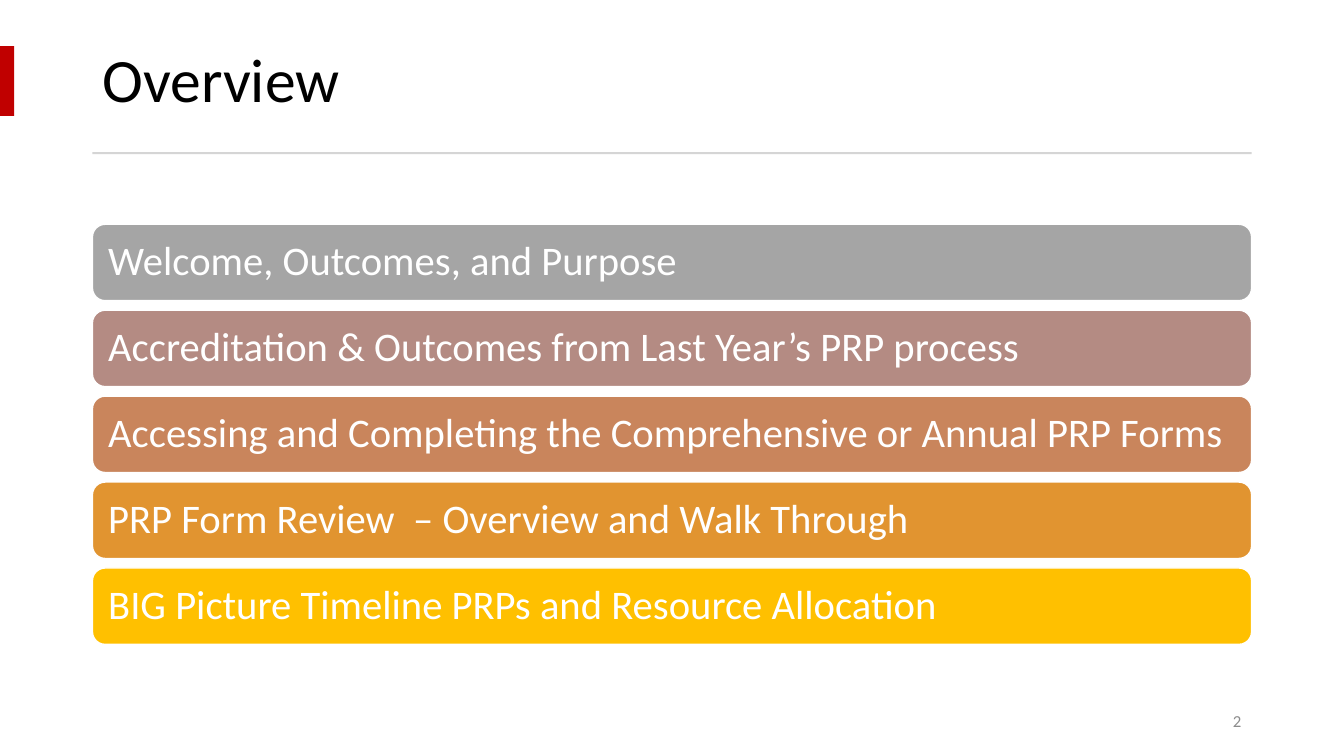
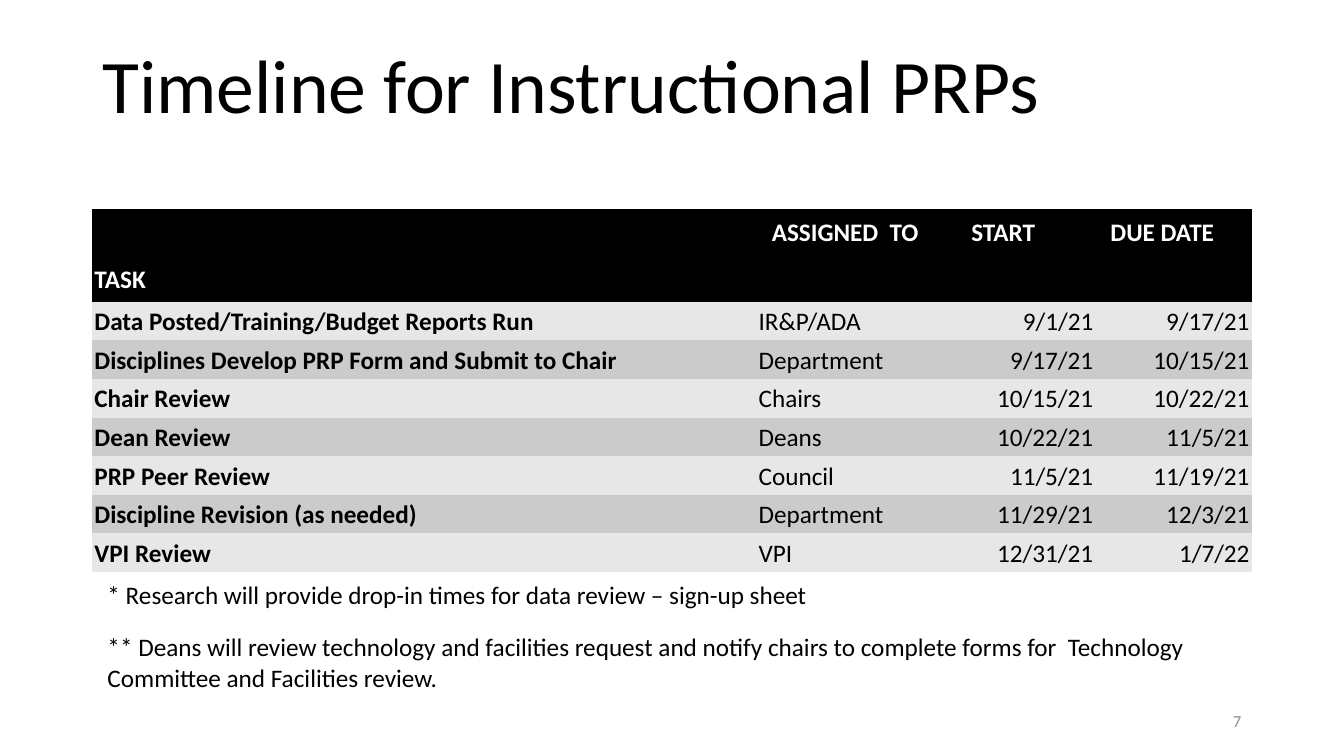
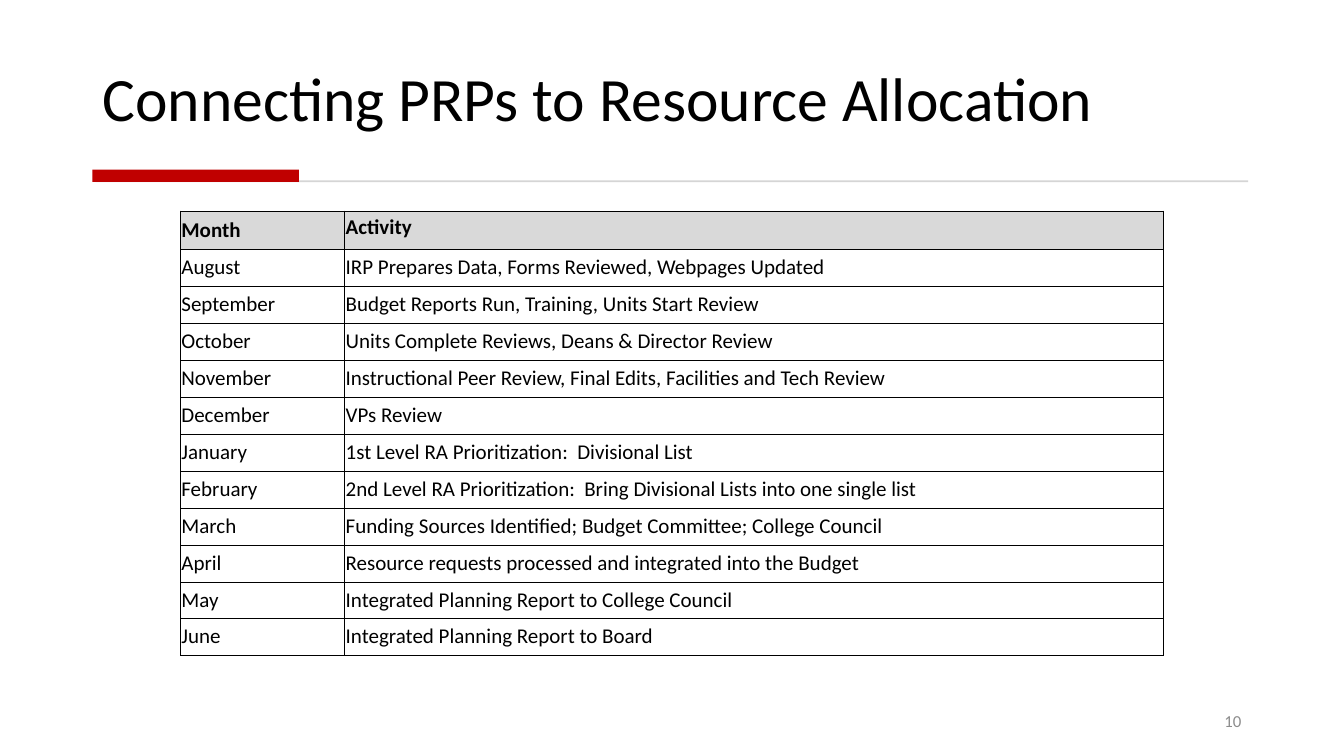
from dataclasses import dataclass

from lxml.etree import SubElement
from pptx import Presentation
from pptx.dml.color import RGBColor
from pptx.enum.shapes import MSO_SHAPE
from pptx.enum.text import MSO_ANCHOR, PP_ALIGN
from pptx.oxml.ns import qn
from pptx.util import Inches, Pt


@dataclass(frozen=True)
class Theme:
    font: str = "Calibri"
    ink: str = "000000"
    paper: str = "FFFFFF"
    accent: str = "C00000"
    rule: str = "D5D5D5"
    muted: str = "8C8C8C"
    header: str = "D9D9D9"
    bands: tuple = ("E7E7E7", "CBCBCB")
    agenda: tuple = ("A5A5A5", "B48B83", "C9855C", "E19430", "FFC000")
    title_size: int = 44
    large_title_size: int = 54
    agenda_size: int = 29
    timeline_size: int = 18
    month_size: int = 15
    footer_size: int = 12
    text_inset: tuple = (1.2, 0.6, 1.2, 0.6)
    agenda_inset: tuple = (1.44, 1.44, 1.44, 1.44)
    roomy_inset: tuple = (1.8, 0.96, 1.8, 0.96)
    tight_inset: tuple = (0.24, 0.24, 0.24, 0)
    month_inset: tuple = (0.12, 0.12, 0.12, 0.72)
    plain_table: str = "{2D5ABB26-0587-4C30-8999-92F81FD0307C}"


GRID_COLUMNS, GRID_ROWS = 160, 90
MARGIN, CONTENT = 11, 138


class Deck:
    def __init__(self, theme):
        self.theme = theme
        self.show = Presentation()
        self.show.slide_width, self.show.slide_height = Inches(13.33), Inches(7.5)
        self.slide = None

    def x(self, columns):
        return round(self.show.slide_width * columns / GRID_COLUMNS)

    def y(self, rows):
        return round(self.show.slide_height * rows / GRID_ROWS)

    def place(self, left, top, width, height):
        return self.x(left), self.y(top), self.x(width), self.y(height)

    def new_slide(self, number):
        self.slide = self.show.slides.add_slide(self.show.slide_layouts[6])
        self.text((113, 83.4, 36, 4.8), str(number), self.theme.footer_size,
                  self.theme.muted, align=PP_ALIGN.RIGHT)

    def margins(self, holder, inset):
        left, top, right, bottom = inset
        holder.margin_left, holder.margin_right = self.x(left), self.x(right)
        holder.margin_top, holder.margin_bottom = self.y(top), self.y(bottom)

    def set_words(self, frame, words, size, color, bold=False,
                  align=PP_ALIGN.LEFT, spacing=None):
        frame.word_wrap = True
        paragraph = frame.paragraphs[0]
        paragraph.text = words
        paragraph.alignment = align
        paragraph.line_spacing = spacing
        font = paragraph.font
        font.name, font.size, font.bold = self.theme.font, Pt(size), bold
        font.color.rgb = RGBColor.from_string(color)

    def text(self, area, words, size, color, anchor=MSO_ANCHOR.MIDDLE, **style):
        frame = self.slide.shapes.add_textbox(*self.place(*area)).text_frame
        self.margins(frame, self.theme.text_inset)
        frame.vertical_anchor = anchor
        self.set_words(frame, words, size, color, **style)

    def title(self, words, top, height, size=None, anchor=MSO_ANCHOR.BOTTOM):
        self.text((MARGIN, top, CONTENT, height), words,
                  size or self.theme.title_size, self.theme.ink, anchor, spacing=0.9)

    def block(self, area, fill, preset=MSO_SHAPE.RECTANGLE):
        block = self.slide.shapes.add_shape(preset, *self.place(*area))
        block.shadow.inherit = False
        block.fill.solid()
        block.fill.fore_color.rgb = RGBColor.from_string(fill)
        block.line.fill.background()
        return block

    def agenda_bar(self, area, words, fill):
        bar = self.block(area, fill, MSO_SHAPE.ROUNDED_RECTANGLE)
        bar.line.color.rgb = RGBColor.from_string(self.theme.paper)
        bar.line.width = Pt(1)
        frame = bar.text_frame
        self.margins(frame, self.theme.agenda_inset)
        frame.vertical_anchor = MSO_ANCHOR.MIDDLE
        self.set_words(frame, words, self.theme.agenda_size, self.theme.paper, spacing=0.9)

    def table(self, left, top, columns, rows, ruled=False):
        area = self.place(left, top, sum(columns), sum(rows))
        holder = self.slide.shapes.add_table(len(rows), len(columns), *area)
        table = holder.table
        table.first_row = table.horz_banding = False
        for style in holder.element.iter(qn("a:tableStyleId")):
            style.text = self.theme.plain_table
        for column, width in zip(table.columns, columns):
            column.width = self.x(width)
        for row, height in zip(table.rows, rows):
            row.height = self.y(height)
        if ruled:
            for cell in holder.element.iter(qn("a:tc")):
                self.border(cell.get_or_add_tcPr())
        return table

    def border(self, properties):
        for side in ("a:lnL", "a:lnR", "a:lnT", "a:lnB"):
            edge = SubElement(properties, qn(side), w=str(Pt(0.5)))
            paint = SubElement(edge, qn("a:solidFill"))
            SubElement(paint, qn("a:srgbClr"), val=self.theme.ink)

    def cell(self, cell, words, size, inset, fill=None, color=None,
             anchor=MSO_ANCHOR.MIDDLE, **style):
        self.margins(cell, inset)
        cell.vertical_anchor = anchor
        self.set_words(cell.text_frame, words, size, color or self.theme.ink, **style)
        if fill:
            cell.fill.solid()
            cell.fill.fore_color.rgb = RGBColor.from_string(fill)
        else:
            cell.fill.background()


AGENDA = (
    "Welcome, Outcomes, and Purpose",
    "Accreditation & Outcomes from Last Year’s PRP process",
    "Accessing and Completing the Comprehensive or Annual PRP Forms",
    "PRP Form Review  – Overview and Walk Through",
    "BIG Picture Timeline PRPs and Resource Allocation",
)
TIMELINE_HEADINGS = ("ASSIGNED  TO", "START", "DUE DATE")
TASKS = (
    ("Data Posted/Training/Budget Reports Run", "IR&P/ADA", "9/1/21", "9/17/21"),
    ("Disciplines Develop PRP Form and Submit to Chair", "Department", "9/17/21", "10/15/21"),
    ("Chair Review", "Chairs", "10/15/21", "10/22/21"),
    ("Dean Review", "Deans", "10/22/21", "11/5/21"),
    ("PRP Peer Review", "Council", "11/5/21", "11/19/21"),
    ("Discipline Revision (as needed)", "Department", "11/29/21", "12/3/21"),
    ("VPI Review", "VPI", "12/31/21", "1/7/22"),
)
REMARKS = (
    "* Research will provide drop-in times for data review – sign-up sheet",
    "** Deans will review technology and facilities request and notify chairs "
    "to complete forms for  Technology Committee and Facilities review.",
)
MONTHS = (
    ("Month", "Activity"),
    ("August", "IRP Prepares Data, Forms Reviewed, Webpages Updated"),
    ("September", "Budget Reports Run, Training, Units Start Review"),
    ("October", "Units Complete Reviews, Deans & Director Review"),
    ("November", "Instructional Peer Review, Final Edits, Facilities and Tech Review"),
    ("December", "VPs Review"),
    ("January", "1st Level RA Prioritization:  Divisional List"),
    ("February", "2nd Level RA Prioritization:  Bring Divisional Lists into one single list"),
    ("March", "Funding Sources Identified; Budget Committee; College Council"),
    ("April", "Resource requests processed and integrated into the Budget"),
    ("May", "Integrated Planning Report to College Council"),
    ("June", "Integrated Planning Report to Board"),
)


def overview(deck):
    theme = deck.theme
    deck.new_slide(2)
    deck.title("Overview", 3.24, 13.2, anchor=MSO_ANCHOR.MIDDLE)
    deck.block((0, 5.5, 1.68, 8.3), theme.accent)
    deck.block((MARGIN, 18.1, CONTENT, 0.24), theme.rule)
    for index, (topic, fill) in enumerate(zip(AGENDA, theme.agenda)):
        deck.agenda_bar((MARGIN, 26.7 + index * 10.23, CONTENT, 9.1), topic, fill)


def timeline(deck):
    theme = deck.theme
    size = theme.timeline_size
    deck.new_slide(7)
    deck.title("Timeline for Instructional PRPs", 3.84, 12.24, theme.large_title_size)
    table = deck.table(MARGIN, 24.88, (79.08, 23.76, 16.56, 18.6),
                       (5.52, *[4.6] * 8, 6.24, 9.84))
    heading = {"size": size, "fill": theme.ink, "color": theme.paper, "bold": True}
    deck.cell(table.cell(0, 0), "", inset=theme.tight_inset, **heading)
    deck.cell(table.cell(1, 0), "TASK", inset=theme.tight_inset, **heading)
    for column, words in enumerate(TIMELINE_HEADINGS, 1):
        table.cell(0, column).merge(table.cell(1, column))
        deck.cell(table.cell(0, column), words, inset=theme.roomy_inset,
                  anchor=MSO_ANCHOR.TOP, **heading)
    for index, task in enumerate(TASKS):
        for column, words in enumerate(task):
            deck.cell(table.cell(index + 2, column), words, size, theme.tight_inset,
                      theme.bands[index % 2], bold=column == 0,
                      align=PP_ALIGN.RIGHT if column > 1 else PP_ALIGN.LEFT)
    for row, remark in enumerate(REMARKS, len(TASKS) + 2):
        table.cell(row, 0).merge(table.cell(row, 3))
        deck.cell(table.cell(row, 0), remark, size, theme.roomy_inset,
                  anchor=MSO_ANCHOR.TOP)


def allocation(deck):
    theme = deck.theme
    deck.new_slide(10)
    deck.title("Connecting PRPs to Resource Allocation", 3.36, 13.32)
    deck.block((11.4, 21.46, 137.2, 0.24), theme.rule)
    deck.block((MARGIN, 20.2, 24.6, 1.44), theme.accent)
    table = deck.table(21.48, 25.12, (19.56, 97.44), (4.56, *[4.4] * 11), ruled=True)
    for row, entry in enumerate(MONTHS):
        is_header = row == 0
        for column, words in enumerate(entry):
            deck.cell(table.cell(row, column), words, theme.month_size, theme.month_inset,
                      theme.header if is_header else None, bold=is_header,
                      anchor=MSO_ANCHOR.MIDDLE if is_header and column else MSO_ANCHOR.BOTTOM)


def main():
    deck = Deck(Theme())
    for build in (overview, timeline, allocation):
        build(deck)
    deck.show.save("out.pptx")


if __name__ == "__main__":
    main()
